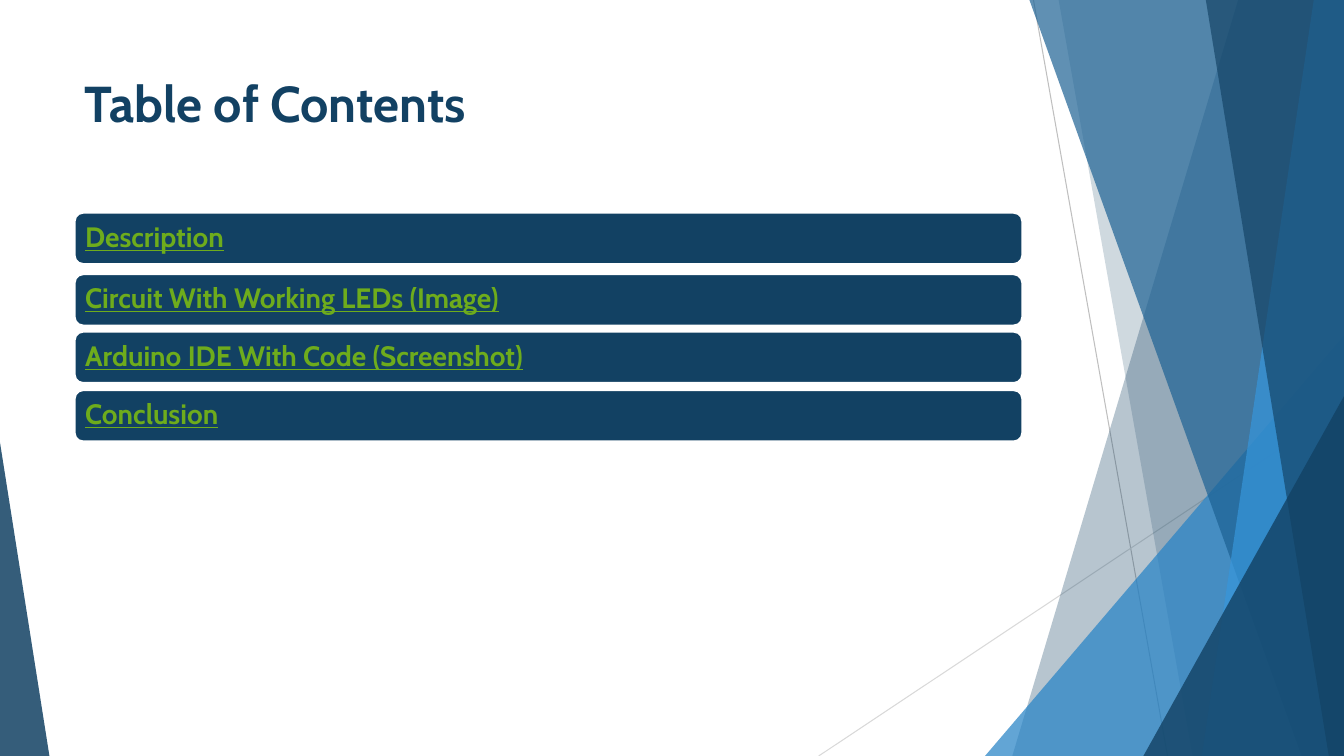
from lxml import etree
from pptx import Presentation
from pptx.dml.color import RGBColor
from pptx.enum import shapes, text
from pptx.oxml.ns import qn
from pptx.util import Inches, Pt

NAVY = RGBColor(0x12, 0x41, 0x63)
DEEP = RGBColor(0x1D, 0x62, 0x94)
BLUE = RGBColor(0x26, 0x83, 0xC6)
SKY = RGBColor(0x37, 0x96, 0xDB)
GREEN = RGBColor(0x6E, 0xAC, 0x1C)
WHITE = RGBColor(0xFF, 0xFF, 0xFF)
GRAY = RGBColor(0xBF, 0xBF, 0xBF)
PALE = RGBColor(0xD9, 0xD9, 0xD9)
WIDE, HIGH = 13.33, 7.5

deck = Presentation()
deck.slide_width, deck.slide_height = Inches(WIDE), Inches(HIGH)
slide = deck.slides.add_slide(deck.slide_layouts[6])
items = slide.shapes


def write(shape, words, size, color, pad=0.1, edge=0.05, line=False,
          anchor=text.MSO_ANCHOR.TOP, space=1.0):
    frame = shape.text_frame
    frame.word_wrap = True
    frame.vertical_anchor = anchor
    frame.margin_left = frame.margin_right = Inches(pad)
    frame.margin_top = frame.margin_bottom = Inches(edge)
    para = frame.paragraphs[0]
    para.alignment = text.PP_ALIGN.LEFT
    para.line_spacing = space
    run = para.add_run()
    run.text = words
    font = run.font
    font.name, font.size, font.bold = "Cabin", Pt(size), True
    font.underline = line
    font.color.rgb = color


def tint(shape, color, alpha):
    """Fill a facet with a see-through colour (alpha in percent), no outline."""
    shape.shadow.inherit = False
    shape.line.fill.background()
    shape.fill.solid()
    shape.fill.fore_color.rgb = color
    tone = shape.fill._xPr.find(".//" + qn("a:srgbClr"))
    etree.SubElement(tone, qn("a:alpha"), val=str(alpha * 1000))


# Thin lines behind the facets
for x1, y1, x2, y2, color in [(10.25, 0, 11.58, HIGH, GRAY),
                              (WIDE, 4.03, 8.12, HIGH, PALE)]:
    line = items.add_connector(shapes.MSO_CONNECTOR.STRAIGHT, Inches(x1),
                               Inches(y1), Inches(x2), Inches(y2))
    line.line.color.rgb = color
    line.line.width = Pt(0.75)
    etree.SubElement(line._element.spPr, qn("a:effectLst"))

# Facets, back to front: a band has its left edge at top and bottom,
# a triangle has left, top, width and the place of its tip
facets = [
    ((12.28, 10.04), NAVY, 30),
    ((10.5, 11.83), NAVY, 20),
    ((9.77, 3.33, 3.56, 1), BLUE, 72),
    ((10.21, 12.91), DEEP, 70),
    ((13.03, 11.92), SKY, 70),
    ((11.96, 13.18), NAVY, 65),
    ((11.34, 3.93, 1.99, 1), NAVY, 80),
    ((0, 4.39, 0.49, 0), NAVY, 85),
]
for spec_nums, color, alpha in facets:
    if len(spec_nums) == 2:
        top, base = spec_nums
        pen = items.build_freeform(Inches(top), 0)
        pen.add_line_segments([(Inches(x), Inches(y)) for x, y in
                               [(WIDE, 0), (WIDE, HIGH), (base, HIGH)]])
        facet = pen.convert_to_shape()
    else:
        left, top, width, tip = spec_nums
        facet = items.add_shape(shapes.MSO_SHAPE.ISOSCELES_TRIANGLE,
                                Inches(left), Inches(top), Inches(width),
                                Inches(HIGH - top))
        facet.adjustments[0] = tip
    tint(facet, color, alpha)

title = items.add_textbox(Inches(0.74), Inches(0.67), Inches(9.4), Inches(1.44))
write(title, "Table of Contents", 36, NAVY)

# Contents bars
for top, words in [(2.11, "Description"),
                   (2.72, "Circuit With Working LEDs (Image)"),
                   (3.29, "Arduino IDE With Code (Screenshot)"),
                   (3.87, "Conclusion")]:
    bar = items.add_shape(shapes.MSO_SHAPE.ROUNDED_RECTANGLE, Inches(0.74),
                          Inches(top), Inches(9.4), Inches(0.51))
    bar.shadow.inherit = False
    bar.fill.solid()
    bar.fill.fore_color.rgb = NAVY
    bar.line.color.rgb = WHITE
    bar.line.width = Pt(1.5)
    write(bar, words, 20, GREEN, pad=0.08, edge=0.08, line=True,
          anchor=text.MSO_ANCHOR.MIDDLE, space=0.9)

deck.save("out.pptx")
